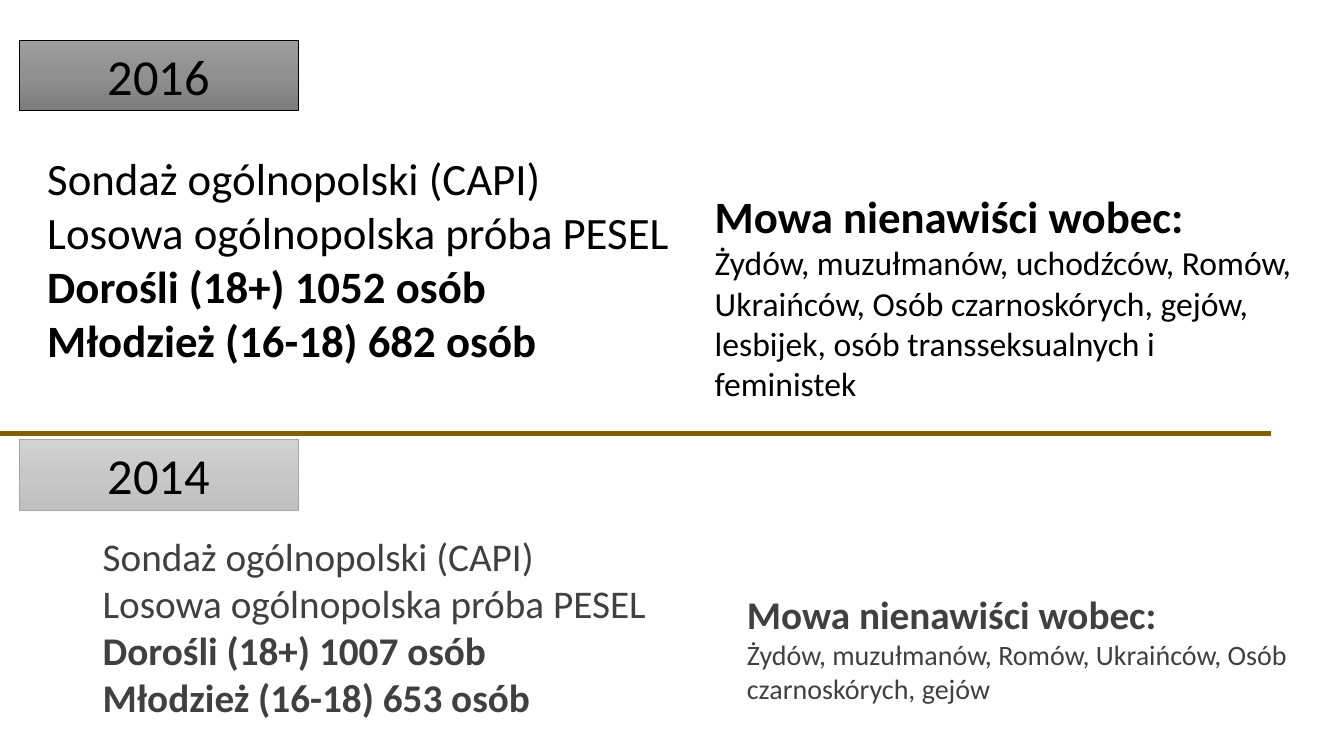
from copy import deepcopy

from pptx import Presentation
from pptx.dml.color import RGBColor
from pptx.enum import shapes, text
from pptx.oxml.ns import qn
from pptx.util import Inches, Pt

FONT = "Calibri"
BLACK = RGBColor(0x00, 0x00, 0x00)
DARK_GREY = RGBColor(0x40, 0x40, 0x40)
MID_GREY = RGBColor(0xA5, 0xA5, 0xA5)
GOLD = RGBColor(0x80, 0x60, 0x00)
STRONG_GRADIENT = [RGBColor(0x9D, 0x9D, 0x9D), RGBColor(0x90, 0x90, 0x90), RGBColor(0x7C, 0x7C, 0x7C)]
PALE_GRADIENT = [RGBColor(0xD2, 0xD2, 0xD2), RGBColor(0xC8, 0xC8, 0xC8), RGBColor(0xC0, 0xC0, 0xC0)]


def fill_gradient(sp, colors):
    sp.fill.gradient()
    sp.fill.gradient_angle = 270
    stop_list = sp._element.spPr.find(qn("a:gradFill")).find(qn("a:gsLst"))
    stop_list.insert(1, deepcopy(stop_list[0]))
    for i, (stop, color) in enumerate(zip(sp.fill.gradient_stops, colors)):
        stop.color.rgb = color
        stop.position = i / (len(colors) - 1)


def format_paragraph(p, content, size, color, bold=False):
    p.text = content
    p.font.name = FONT
    p.font.size = Pt(size)
    p.font.color.rgb = color
    p.font.bold = bold


def add_year_label(slide, left, top, year, gradient, border):
    sp = slide.shapes.add_shape(
        shapes.MSO_SHAPE.RECTANGLE, Inches(left), Inches(top), Inches(2.77), Inches(0.7))
    sp.shadow.inherit = False
    fill_gradient(sp, gradient)
    sp.line.color.rgb = border
    sp.line.width = Pt(0.5)
    tf = sp.text_frame
    tf.vertical_anchor = text.MSO_ANCHOR.MIDDLE
    p = tf.paragraphs[0]
    p.alignment = text.PP_ALIGN.CENTER
    format_paragraph(p, year, 36, BLACK)


def add_lines(slide, box, lines, color, wrap):
    tf = slide.shapes.add_textbox(*map(Inches, box)).text_frame
    tf.word_wrap = wrap
    tf.auto_size = text.MSO_AUTO_SIZE.SHAPE_TO_FIT_TEXT
    for i, (content, size, bold) in enumerate(lines):
        p = tf.add_paragraph() if i else tf.paragraphs[0]
        format_paragraph(p, content, size, color, bold)


def add_survey(slide, left, top, year, adults, youth, groups, size, color,
               gradient, border, sample_box, groups_box):
    add_year_label(slide, left, top, year, gradient, border)
    sample = [
        ("Sondaż ogólnopolski (CAPI)", size, False),
        ("Losowa ogólnopolska próba PESEL", size, False),
        (f"Dorośli (18+) {adults} osób", size, True),
        (f"Młodzież (16-18) {youth} osób", size, True),
    ]
    targets = [("Mowa nienawiści wobec:", size, True), (groups, size - 8, False)]
    for (dx, dy, width, height), lines, wrap in (
            (sample_box, sample, False), (groups_box, targets, True)):
        add_lines(slide, (left + dx, top + dy, width, height), lines, color, wrap)


def add_divider(slide, left, top, width):
    line = slide.shapes.add_connector(
        shapes.MSO_CONNECTOR.STRAIGHT,
        Inches(left), Inches(top), Inches(left + width), Inches(top))
    line.line.color.rgb = GOLD
    line.line.width = Pt(3)
    spPr = line._element.spPr
    spPr.append(spPr.makeelement(qn("a:effectLst"), {}))


def main():
    prs = Presentation()
    prs.slide_width, prs.slide_height = Inches(13.33), Inches(7.5)
    slide = prs.slides.add_slide(prs.slide_layouts[6])
    add_divider(slide, 0, 4.3, 12.61)
    add_survey(
        slide, 0.19, 0.4, "2016", 1052, 682,
        "Żydów, muzułmanów, uchodźców, Romów, Ukraińców, Osób czarnoskórych, "
        "gejów, lesbijek, osób transseksualnych i feministek",
        32, BLACK, STRONG_GRADIENT, BLACK,
        sample_box=(0.18, 1.05, 6.43, 2.26), groups_box=(6.8, 1.42, 5.99, 2.26))
    add_survey(
        slide, 0.19, 4.36, "2014", 1007, 653,
        "Żydów, muzułmanów, Romów, Ukraińców, Osób czarnoskórych, gejów",
        28, DARK_GREY, PALE_GRADIENT, MID_GREY,
        sample_box=(0.73, 0.87, 5.65, 1.99), groups_box=(7.12, 1.45, 5.83, 1.25))
    prs.save("out.pptx")


if __name__ == "__main__":
    main()
